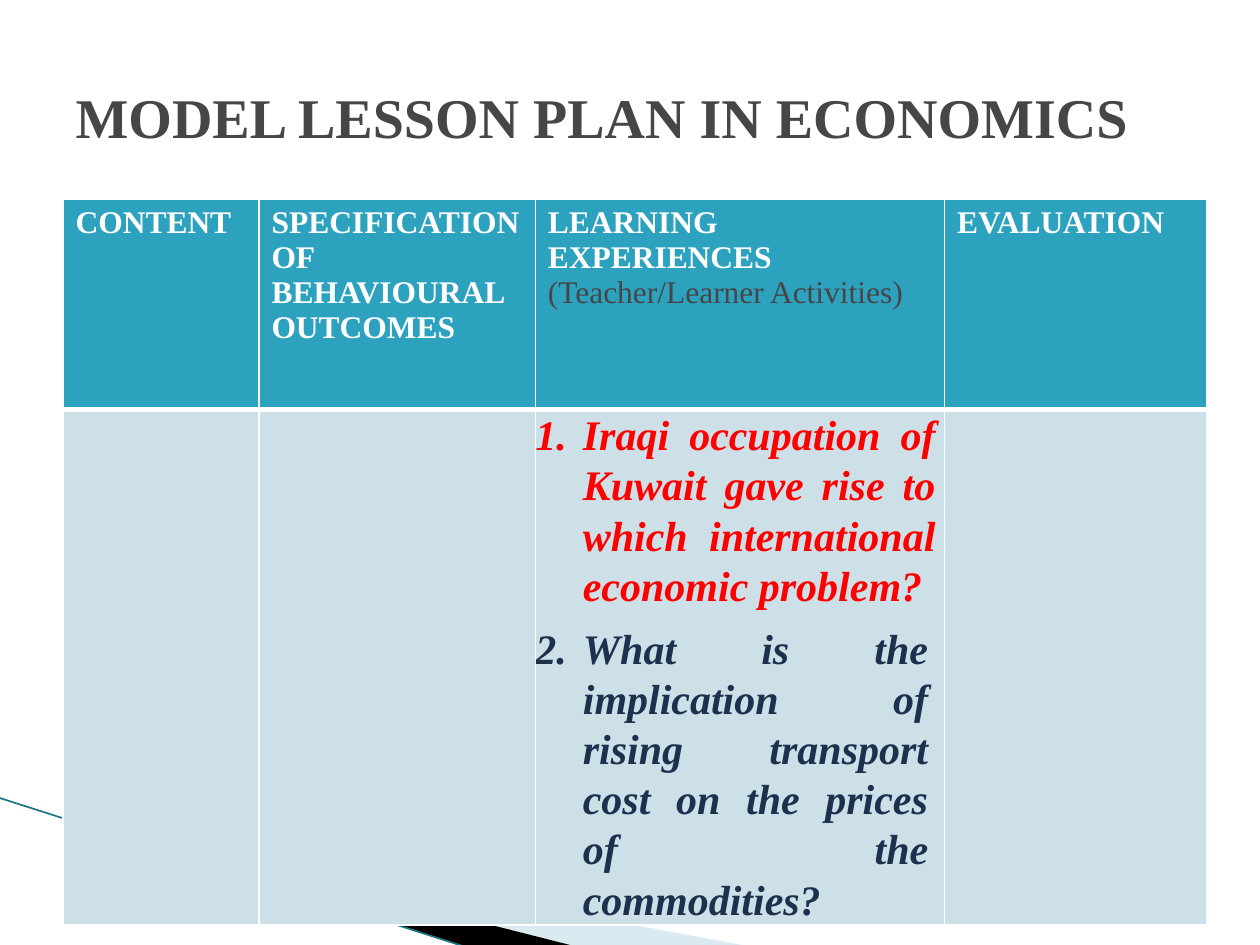
from lxml.etree import SubElement
from pptx import Presentation
from pptx.dml.color import RGBColor
from pptx.enum.shapes import MSO_CONNECTOR
from pptx.enum.text import MSO_ANCHOR, PP_ALIGN
from pptx.oxml.ns import qn
from pptx.util import Cm, Pt

FONT = "Times New Roman"
TITLE = "MODEL LESSON PLAN IN ECONOMICS"
HEADERS = [
    [("CONTENT", "FFFFFF", True)],
    [("SPECIFICATION OF BEHAVIOURAL OUTCOMES", "FFFFFF", True)],
    [("LEARNING EXPERIENCES", "FFFFFF", True),
     ("(Teacher/Learner Activities)", "464646", False)],
    [("EVALUATION", "FFFFFF", True)],
]
QUESTIONS = [
    ("Iraqi occupation of Kuwait gave rise to which international economic problem?",
     "FF0000", 0, 0.18),
    ("What is the implication of rising transport cost on the prices of the commodities?",
     "1C314E", 7.6, 0.33),
]
QUESTION_COLUMN = 2
COLUMN_WIDTHS = [3.95, 5.57, 8.25, 5.29]
ROW_HEIGHTS = [4.24, 10.39]
ROW_FILLS = ["2DA2BF", "CDE0E8"]
ROW_BORDERS = [
    {"lnL": 1, "lnR": 1, "lnT": 1, "lnB": 3},
    {"lnL": 1, "lnR": 1, "lnT": 3, "lnB": 1},
]
SWOOSHES = [
    ((1.98, 13.89, 10.57, 4.01),
     [(1.4, 16.54), (15.11, 19.08), (11.58, 19.08), (1.4, 16.51)], "A0CBDC", 40),
    ((-0.15, 16.08, 10.57, 2.34),
     [(1.35, 16.48), (11.61, 19.08), (9.45, 19.1), (1.37, 16.51)], "000000", 100),
]


def paint(fill, color):
    """Fill with a solid hex colour."""
    fill.solid()
    fill.fore_color.rgb = RGBColor.from_string(color)


def add_text(paragraph, text, size, color, bold=True, italic=False):
    """Add one formatted run to a paragraph."""
    run = paragraph.add_run()
    run.text = text
    font = run.font
    font.name, font.size, font.bold, font.italic = FONT, Pt(size), bold, italic
    paint(font.fill, color)


def next_paragraph(frame, index):
    """Return the first paragraph of a frame, or a new one after it."""
    return frame.paragraphs[0] if index == 0 else frame.add_paragraph()


def set_frame(swoosh, frame):
    """Set the frame of an outline while its corners stay in place."""
    left, top, width, height = (Cm(length) for length in frame)
    shift_x, shift_y = swoosh.left - left, swoosh.top - top
    for outline in swoosh._element.iter(qn("a:path")):
        outline.set("w", str(width))
        outline.set("h", str(height))
        for corner in outline.iter(qn("a:pt")):
            corner.set("x", str(int(corner.get("x")) + shift_x))
            corner.set("y", str(int(corner.get("y")) + shift_y))
    swoosh.left, swoosh.top, swoosh.width, swoosh.height = left, top, width, height


def add_swoosh(slide, frame, points, color, opacity):
    """Draw a closed decorative outline."""
    corners = [(Cm(x), Cm(y)) for x, y in points]
    builder = slide.shapes.build_freeform(*corners[0], scale=1.0)
    builder.add_line_segments(corners[1:], close=True)
    swoosh = builder.convert_to_shape()
    set_frame(swoosh, frame)
    swoosh.shadow.inherit = False
    swoosh.line.fill.background()
    paint(swoosh.fill, color)
    if opacity < 100:
        tint = swoosh.fill._xPr.find(qn("a:solidFill"))[0]
        SubElement(tint, qn("a:alpha"), val=str(opacity * 1000))


def add_edge(slide):
    """Draw the thin line along the swooshes."""
    edge = slide.shapes.add_connector(
        MSO_CONNECTOR.STRAIGHT, Cm(-0.03), Cm(16.08), Cm(9.42), Cm(19.1))
    paint(edge.line.fill, "1B7587")
    edge.line.width = Pt(0.95)
    SubElement(edge._element.spPr, qn("a:effectLst"))


def style_cell(cell, color, borders):
    """Give a cell white borders and a solid fill."""
    properties = cell._tc.get_or_add_tcPr()
    for side, width in borders.items():
        border = SubElement(properties, qn(f"a:{side}"), w=str(Pt(width)))
        SubElement(SubElement(border, qn("a:solidFill")), qn("a:srgbClr"), val="FFFFFF")
    paint(cell.fill, color)


def write_questions(cell):
    """Write the numbered, justified questions."""
    cell.margin_left = cell.margin_right = cell.margin_top = cell.margin_bottom = 0
    for index, (question, color, before, right) in enumerate(QUESTIONS):
        paragraph = next_paragraph(cell.text_frame, index)
        paragraph.alignment = PP_ALIGN.JUSTIFY
        properties = paragraph._p.get_or_add_pPr()
        properties.set("marL", str(Cm(0.96)))
        properties.set("marR", str(Cm(right)))
        properties.set("indent", str(Cm(-0.96)))
        SubElement(properties, qn("a:buFont"), typeface="+mj-lt")
        SubElement(properties, qn("a:buAutoNum"), type="arabicPeriod")
        tabs = SubElement(properties, qn("a:tabLst"))
        SubElement(tabs, qn("a:tab"), pos=str(Cm(1.3)), algn="l")
        paragraph.line_spacing = 1.08
        paragraph.space_before = Pt(before)
        add_text(paragraph, question, 24, color, italic=True)


def add_plan(slide):
    """Build the lesson plan table."""
    plan = slide.shapes.add_table(
        len(ROW_HEIGHTS), len(COLUMN_WIDTHS), Cm(1.27), Cm(4.02),
        Cm(sum(COLUMN_WIDTHS)), Cm(sum(ROW_HEIGHTS))).table
    for column, width in zip(plan.columns, COLUMN_WIDTHS):
        column.width = Cm(width)
    for row, height, color, borders in zip(plan.rows, ROW_HEIGHTS, ROW_FILLS, ROW_BORDERS):
        row.height = Cm(height)
        for cell in row.cells:
            style_cell(cell, color, borders)
    for column, lines in enumerate(HEADERS):
        frame = plan.cell(0, column).text_frame
        for index, (text, color, bold) in enumerate(lines):
            add_text(next_paragraph(frame, index), text, 18, color, bold)
    write_questions(plan.cell(1, QUESTION_COLUMN))


def add_title(slide):
    """Place and format the slide title."""
    title = slide.shapes.title
    title.left, title.top, title.width, title.height = Cm(1.27), Cm(0.76), Cm(22.86), Cm(3.18)
    frame = title.text_frame
    frame.vertical_anchor = MSO_ANCHOR.MIDDLE
    frame.paragraphs[0].alignment = PP_ALIGN.LEFT
    add_text(frame.paragraphs[0], TITLE, 32, "464646")


def main():
    """Build and save the slide."""
    deck = Presentation()
    deck.slide_width, deck.slide_height = Cm(25.4), Cm(19.05)
    slide = deck.slides.add_slide(deck.slide_layouts[5])
    paint(slide.background.fill, "FFFFFF")
    for swoosh in SWOOSHES:
        add_swoosh(slide, *swoosh)
    add_edge(slide)
    add_plan(slide)
    add_title(slide)
    deck.save("out.pptx")


if __name__ == "__main__":
    main()
